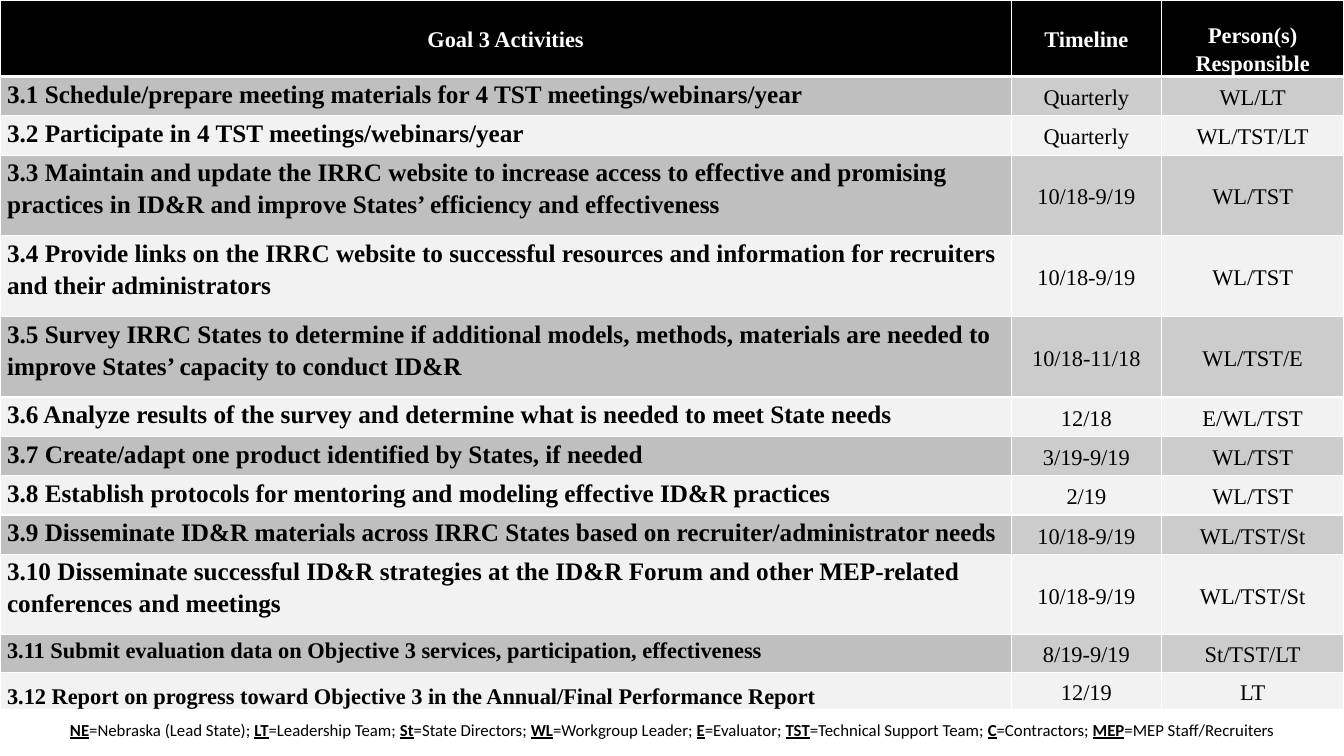
from lxml import etree
from pptx import Presentation
from pptx.dml.color import RGBColor
from pptx.enum.shapes import MSO_SHAPE
from pptx.enum.text import MSO_ANCHOR, PP_ALIGN
from pptx.oxml.ns import qn
from pptx.util import Inches, Pt

TOP, MIDDLE, BOTTOM = MSO_ANCHOR.TOP, MSO_ANCHOR.MIDDLE, MSO_ANCHOR.BOTTOM
LEFT, CENTER = PP_ALIGN.LEFT, PP_ALIGN.CENTER
RECTANGLE = MSO_SHAPE.RECTANGLE

PAGE_WIDTH, PAGE_HEIGHT = 13.33, 7.5
BLACK, WHITE = "000000", "FFFFFF"
DARK_BAND, MID_BAND, LIGHT_BAND = "BFBFBF", "CCCCCC", "F2F2F2"
TABLE_FONT, LEGEND_FONT = "Times New Roman", "Calibri"

COLUMN_WIDTHS = (10.03, 1.49, 1.81)
HEADER_HEIGHT, ONE_LINE, TWO_LINES, CLOSING_LINE = 0.76, 0.39, 0.8, 0.37
HEADINGS = ("Goal 3 Activities", "Timeline", "Person(s)\nResponsible")

# Row height, activity, timeline, persons responsible
ACTIVITIES = (
    (ONE_LINE, "3.1 Schedule/prepare meeting materials for 4 TST meetings/webinars/year",
     "Quarterly", "WL/LT"),
    (ONE_LINE, "3.2 Participate in 4 TST meetings/webinars/year",
     "Quarterly", "WL/TST/LT"),
    (TWO_LINES, "3.3 Maintain and update the IRRC website to increase access to effective "
     "and promising practices in ID&R and improve States’ efficiency and effectiveness",
     "10/18-9/19", "WL/TST"),
    (TWO_LINES, "3.4 Provide links on the IRRC website to successful resources and "
     "information for recruiters and their administrators",
     "10/18-9/19", "WL/TST"),
    (TWO_LINES, "3.5 Survey IRRC States to determine if additional models, methods, "
     "materials are needed to improve States’ capacity to conduct ID&R",
     "10/18-11/18", "WL/TST/E"),
    (ONE_LINE, "3.6 Analyze results of the survey and determine what is needed to meet "
     "State needs", "12/18", "E/WL/TST"),
    (ONE_LINE, "3.7 Create/adapt one product identified by States, if needed",
     "3/19-9/19", "WL/TST"),
    (ONE_LINE, "3.8 Establish protocols for mentoring and modeling effective ID&R practices",
     "2/19", "WL/TST"),
    (ONE_LINE, "3.9 Disseminate ID&R materials across IRRC States based on "
     "recruiter/administrator needs", "10/18-9/19", "WL/TST/St"),
    (TWO_LINES, "3.10 Disseminate successful ID&R strategies at the ID&R Forum and other "
     "MEP-related conferences and meetings", "10/18-9/19", "WL/TST/St"),
    (CLOSING_LINE, "3.11 Submit evaluation data on Objective 3 services, participation, "
     "effectiveness", "8/19-9/19", "St/TST/LT"),
    (CLOSING_LINE, "3.12 Report on progress toward Objective 3 in the Annual/Final "
     "Performance Report", "12/19", "LT"),
)

LEGEND = (
    ("NE", "Nebraska (Lead State)"), ("LT", "Leadership Team"),
    ("St", "State Directors"), ("WL", "Workgroup Leader"), ("E", "Evaluator"),
    ("TST", "Technical Support Team"), ("C", "Contractors"),
    ("MEP", "MEP Staff/Recruiters"),
)


def paint(fill, color):
    fill.solid()
    fill.fore_color.rgb = RGBColor.from_string(color)


def add_span(para, text, font, size, color, bold=False, underline=False):
    span = para.add_run()
    span.text = text
    span.font.name = font
    span.font.size = Pt(size)
    span.font.bold = bold
    span.font.underline = underline
    span.font.color.rgb = RGBColor.from_string(color)


def add_borders(cell, top=1, bottom=1):
    properties = cell._tc.get_or_add_tcPr()
    for side, width in (("lnL", 1), ("lnR", 1), ("lnT", top), ("lnB", bottom)):
        line = etree.SubElement(properties, qn("a:" + side), w=str(Pt(width)))
        solid = etree.SubElement(line, qn("a:solidFill"))
        etree.SubElement(solid, qn("a:srgbClr"), val=WHITE)


def fill_cell(cell, text, band, size=16, color=BLACK, bold=False,
              align=CENTER, anchor=MIDDLE):
    cell.margin_left = cell.margin_right = Inches(0.07)
    cell.margin_top = cell.margin_bottom = 0
    cell.vertical_anchor = anchor
    paint(cell.fill, band)
    frame = cell.text_frame
    for index, line in enumerate(text.split("\n")):
        para = frame.add_paragraph() if index else frame.paragraphs[0]
        para.alignment = align
        para.line_spacing = 1.15
        add_span(para, line, TABLE_FONT, size, color, bold)


def add_activity_table(page):
    heights = [HEADER_HEIGHT] + [row[0] for row in ACTIVITIES]
    table = page.shapes.add_table(
        len(heights), len(COLUMN_WIDTHS), 0, 0,
        Inches(PAGE_WIDTH), Inches(sum(heights))).table
    for column, width in zip(table.columns, COLUMN_WIDTHS):
        column.width = Inches(width)
    for row, height in zip(table.rows, heights):
        row.height = Inches(height)

    # Header row
    for column, heading in enumerate(HEADINGS):
        cell = table.cell(0, column)
        add_borders(cell, bottom=3)
        fill_cell(cell, heading, BLACK, color=WHITE, bold=True,
                  anchor=BOTTOM if "\n" in heading else MIDDLE)

    # Activity rows in alternating bands
    for number, (height, activity, *details) in enumerate(ACTIVITIES, 1):
        is_dark = number % 2 == 1
        cells = [table.cell(number, column) for column in range(len(COLUMN_WIDTHS))]
        for cell in cells:
            add_borders(cell, top=3 if number == 1 else 1)
        fill_cell(cells[0], activity, DARK_BAND if is_dark else LIGHT_BAND,
                  size=16 if height == CLOSING_LINE else 18, bold=True, align=LEFT,
                  anchor=BOTTOM if number == len(ACTIVITIES) else TOP)
        for cell, detail in zip(cells[1:], details):
            fill_cell(cell, detail, MID_BAND if is_dark else LIGHT_BAND)


def add_legend(page):
    width = 12.29
    box = page.shapes.add_shape(
        RECTANGLE, Inches((PAGE_WIDTH - width) / 2), Inches(7.09),
        Inches(width), Inches(0.3))
    box.shadow.inherit = False
    paint(box.fill, WHITE)
    box.line.fill.background()
    frame = box.text_frame
    frame.word_wrap = True
    frame.vertical_anchor = MIDDLE
    para = frame.paragraphs[0]
    para.alignment = CENTER
    for index, (code, meaning) in enumerate(LEGEND, 1):
        ending = "; " if index < len(LEGEND) else ""
        add_span(para, code, LEGEND_FONT, 12, BLACK, bold=True, underline=True)
        add_span(para, f"={meaning}{ending}", LEGEND_FONT, 12, BLACK)


def main():
    deck = Presentation()
    deck.slide_width = Inches(PAGE_WIDTH)
    deck.slide_height = Inches(PAGE_HEIGHT)
    page = deck.slides.add_slide(deck.slide_layouts[6])
    add_activity_table(page)
    add_legend(page)
    deck.save("out.pptx")


if __name__ == "__main__":
    main()
